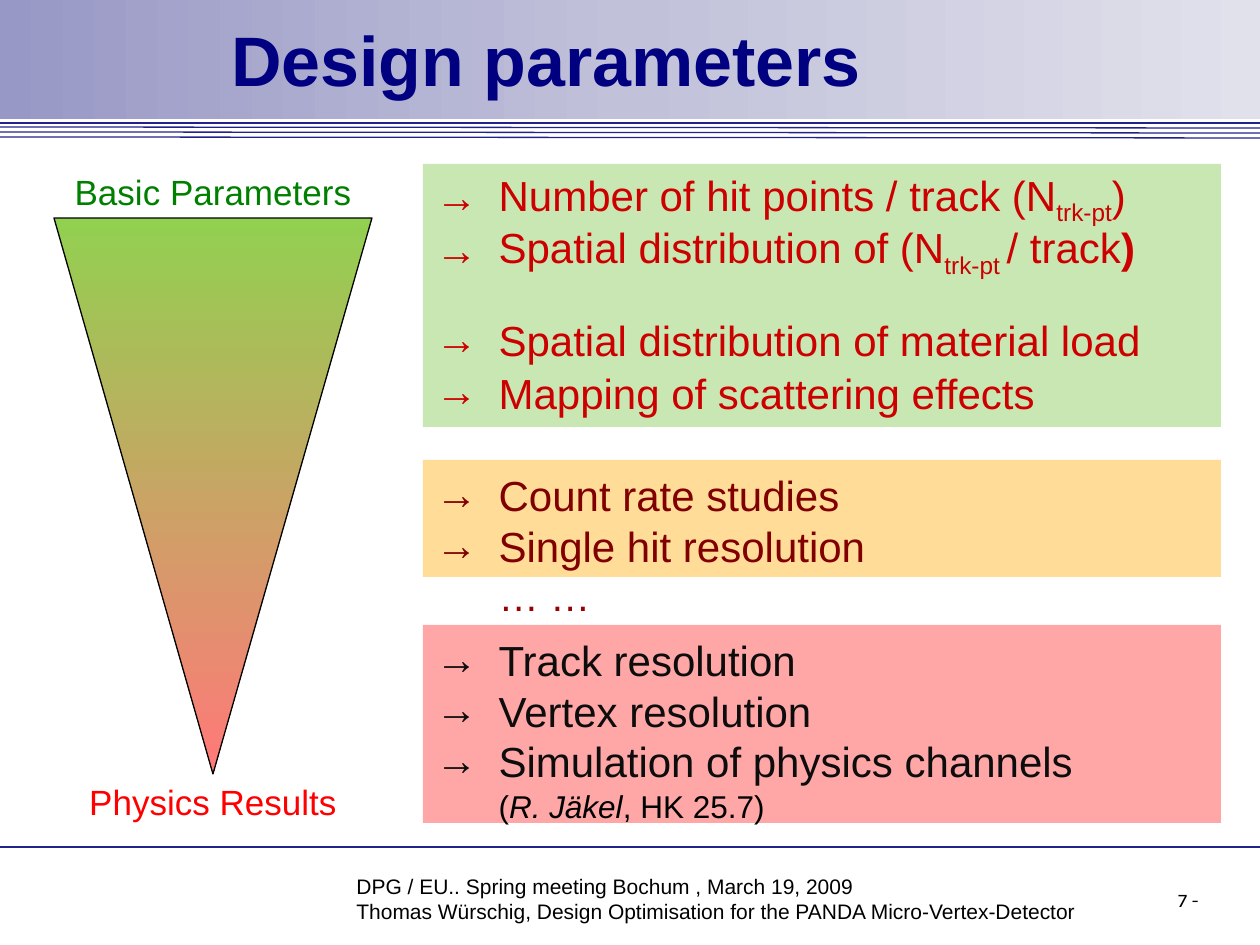
import copy

import pptx
import pptx.dml.color
import pptx.enum.shapes
import pptx.enum.text
import pptx.oxml
import pptx.oxml.ns
import pptx.util

RGBColor = pptx.dml.color.RGBColor
Pt = pptx.util.Pt
MSO_SHAPE = pptx.enum.shapes.MSO_SHAPE
ALIGN = pptx.enum.text.PP_ALIGN
ANCHOR = pptx.enum.text.MSO_ANCHOR
AUTO_SIZE = pptx.enum.text.MSO_AUTO_SIZE

PX = 914400 / 126
WIDTH, HEIGHT = 1260, 945

BLACK = RGBColor(0, 0, 0)
NAVY = RGBColor(0, 0, 0x80)
RULE_BLUE = RGBColor(0x22, 0x22, 0x8B)
HEADER_STOPS = [RGBColor(0x98, 0x98, 0xC6), RGBColor(0xC1, 0xC1, 0xDA), RGBColor(0xE1, 0xE1, 0xEC)]
FUNNEL_STOPS = [RGBColor(0x92, 0xD0, 0x50), RGBColor(0xFF, 0x79, 0x79)]
GREEN = RGBColor(0, 0x80, 0)
RED = RGBColor(0xFF, 0, 0)
PALE_GREEN = RGBColor(0xC9, 0xE7, 0xB3)
PALE_ORANGE = RGBColor(0xFF, 0xDC, 0x97)
PALE_RED = RGBColor(0xFF, 0xA7, 0xA7)
CRIMSON = RGBColor(0xCC, 0, 0)
MAROON = RGBColor(0x80, 0, 0)
DARK_RED = RGBColor(0x99, 0, 0)
INK = RGBColor(0x0D, 0x0D, 0x0D)


def px(value):
    return pptx.util.Emu(round(value * PX))


def add_run(paragraph, text, size, color, font="Arial", bold=False, italic=False, subscript=False):
    run = paragraph.add_run()
    run.text = text
    run.font.name = font
    run.font.size = Pt(size)
    run.font.color.rgb = color
    run.font.bold = bold
    run.font.italic = italic
    if subscript:
        run.font._element.set("baseline", "-25000")


def add_label(slide, box, lines, size, color, font="Arial", align=ALIGN.LEFT, spacing=None):
    text_frame = slide.shapes.add_textbox(*map(px, box)).text_frame
    text_frame.word_wrap = True
    for index, line in enumerate(lines):
        paragraph = text_frame.add_paragraph() if index else text_frame.paragraphs[0]
        paragraph.alignment = align
        paragraph.line_spacing = spacing
        add_run(paragraph, line, size, color, font)


def add_plain_shape(slide, kind, box):
    shape = slide.shapes.add_shape(kind, *map(px, box))
    shape.shadow.inherit = False
    shape.line.fill.background()
    return shape


def fill_gradient(shape, colors, angle):
    """Spread the colours evenly along the given angle."""
    shape.fill.gradient()
    shape.fill.gradient_angle = angle
    stop_list = shape._element.spPr.find(".//" + pptx.oxml.ns.qn("a:gsLst"))
    while len(stop_list) < len(colors):
        stop_list.append(copy.deepcopy(stop_list[-1]))
    for index, (stop, color) in enumerate(zip(shape.fill.gradient_stops, colors)):
        stop.position = index / (len(colors) - 1)
        stop.color.rgb = color


def add_rule(slide, start_y, end_y):
    rule = slide.shapes.add_connector(
        pptx.enum.shapes.MSO_CONNECTOR.STRAIGHT, 0, px(start_y), px(WIDTH), px(end_y))
    rule.line.color.rgb = RULE_BLUE
    rule.line.width = Pt(0.75)
    rule._element.spPr.append(pptx.oxml.parse_xml(
        f'<a:effectLst {pptx.oxml.ns.nsdecls("a")}/>'))


def place_placeholder(slide, placeholder, box):
    """Move a placeholder into the box and in front of what is already there."""
    slide.shapes._spTree.append(placeholder._element)
    placeholder.left, placeholder.top, placeholder.width, placeholder.height = map(px, box)
    placeholder.text_frame.auto_size = AUTO_SIZE.NONE
    return placeholder.text_frame


def add_header(slide, box):
    left, top, width, height = box
    band = add_plain_shape(slide, MSO_SHAPE.RECTANGLE, box)
    fill_gradient(band, HEADER_STOPS, 0)
    bottom = top + height
    for offset, drop in ((4, 0), (8, 1), (13, 1), (18, 1)):
        add_rule(slide, bottom + offset, bottom + offset + drop)

    text_frame = place_placeholder(slide, slide.shapes.title, (left + 88, top + 10, 916, 97))
    text_frame.vertical_anchor = ANCHOR.MIDDLE
    text_frame.margin_left = text_frame.margin_right = 0
    text_frame.margin_top = text_frame.margin_bottom = 0
    paragraph = text_frame.paragraphs[0]
    paragraph.alignment = ALIGN.CENTER
    add_run(paragraph, "Design parameters", 40, NAVY, bold=True)


def add_funnel(slide, box):
    left, top, width, height = box
    label_height = 55
    add_label(slide, (left, top, width, label_height), ["Basic Parameters"], 20, GREEN,
              align=ALIGN.CENTER)
    funnel = add_plain_shape(slide, MSO_SHAPE.FLOWCHART_MERGE,
                             (left, top + label_height - 1, width, height - 2 * label_height + 1))
    fill_gradient(funnel, FUNNEL_STOPS, 270)
    funnel.line.color.rgb = BLACK
    funnel.line.width = Pt(0.75)
    add_label(slide, (left, top + height - label_height, width, label_height),
              ["Physics Results"], 20, RED, align=ALIGN.CENTER)


def add_item(paragraph, bullet=True, before=0, spacing=None):
    """Set a list line with its text on the hanging indent."""
    properties = paragraph._p.get_or_add_pPr()
    indent = px(63)
    properties.set("marL", str(indent))
    properties.set("indent", str(-indent if bullet else 0))
    tags = ['<a:buFont {} typeface="Arial"/>', '<a:buChar {} char="→"/>'] if bullet else ["<a:buNone {}/>"]
    for tag in tags:
        properties.append(pptx.oxml.parse_xml(tag.format(pptx.oxml.ns.nsdecls("a"))))
    paragraph.alignment = ALIGN.LEFT
    paragraph.space_before = Pt(before)
    paragraph.space_after = Pt(0)
    paragraph.line_spacing = Pt(spacing) if spacing else 1.0


def add_parameter_list(slide, box):
    left, top, width, height = box
    for offset, panel_height, color in ((0, 263, PALE_GREEN), (296, 117, PALE_ORANGE),
                                        (461, 198, PALE_RED)):
        panel = add_plain_shape(slide, MSO_SHAPE.RECTANGLE,
                                (left, top + offset, width, panel_height))
        panel.fill.solid()
        panel.fill.fore_color.rgb = color

    sub = {"subscript": True}
    items = [
        ({"spacing": 30}, 24, CRIMSON,
         [("Number of hit points / track (N", {}), ("trk-pt", sub), (")", {})]),
        ({"spacing": 30}, 24, CRIMSON,
         [("Spatial distribution of (N", {}), ("trk-pt ", sub), ("/ track", {}),
          (")", {"bold": True})]),
        ({"spacing": 30, "before": 19}, 24, CRIMSON,
         [("Spatial distribution of material load", {})]),
        ({"spacing": 30}, 24, CRIMSON, [("Mapping of scattering effects", {})]),
        ({"before": 30}, 24, MAROON, [("Count rate studies", {})]),
        ({}, 24, MAROON, [("Single hit resolution", {})]),
        ({"bullet": False}, 23, DARK_RED, [("… …", {})]),
        ({"before": 9}, 24, INK, [("Track resolution", {})]),
        ({}, 24, INK, [("Vertex resolution", {})]),
        ({}, 24, INK, [("Simulation of physics channels", {})]),
        ({"bullet": False, "spacing": 22}, 18, BLACK,
         [("(", {}), ("R. Jäkel", {"italic": True}), (", HK 25.7)", {})]),
    ]
    text_frame = place_placeholder(slide, slide.placeholders[1],
                                   (left, top + 4, width + 10, height + 10))
    text_frame.vertical_anchor = ANCHOR.TOP
    for index, (layout, size, color, runs) in enumerate(items):
        paragraph = text_frame.add_paragraph() if index else text_frame.paragraphs[0]
        add_item(paragraph, **layout)
        for text, style in runs:
            add_run(paragraph, text, size, color, **style)


def add_footer(slide, box):
    left, top, width, height = box
    add_rule(slide, top, top)
    add_label(slide, (left + 344, top + 20, 777, 64),
              ["DPG / EU.. Spring meeting Bochum , March 19, 2009",
               "Thomas Würschig, Design Optimisation for the PANDA Micro-Vertex-Detector"],
              12, BLACK)
    add_label(slide, (left + 949, top + 32, 262, 35), ["7 -"], 11, BLACK, "Karla",
              ALIGN.RIGHT, 1.14)


def main():
    presentation = pptx.Presentation()
    presentation.slide_width = px(WIDTH)
    presentation.slide_height = px(HEIGHT)
    slide = presentation.slides.add_slide(presentation.slide_layouts[1])
    add_footer(slide, (0, 847, WIDTH, 98))
    add_header(slide, (0, 0, WIDTH, 119))
    add_parameter_list(slide, (423, 164, 798, 659))
    add_funnel(slide, (54, 164, 318, 665))
    presentation.save("out.pptx")


if __name__ == "__main__":
    main()
